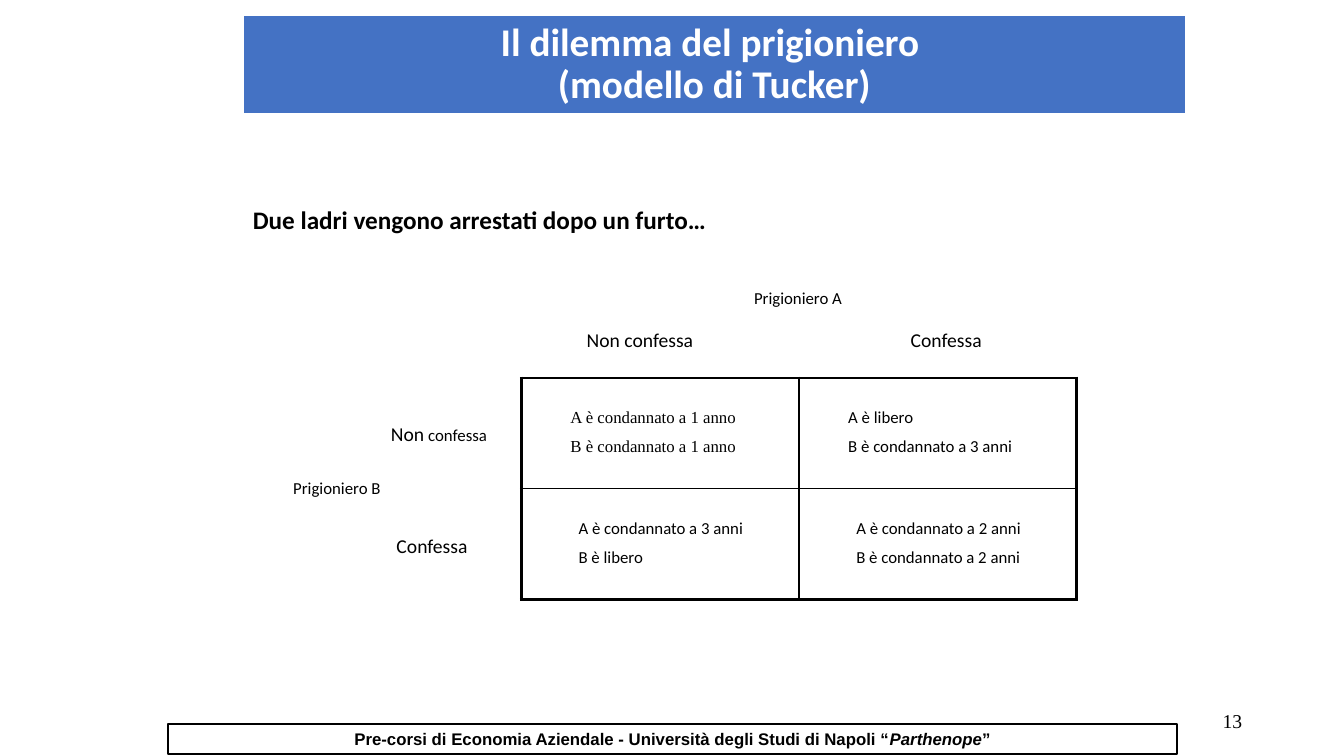
"""Build the prisoner's dilemma slide with its payoff matrix."""
from lxml.etree import SubElement
from pptx import Presentation
from pptx.dml.color import RGBColor
from pptx.enum.shapes import MSO_SHAPE
from pptx.enum.text import MSO_ANCHOR, PP_ALIGN
from pptx.oxml.ns import qn
from pptx.util import Inches, Pt

BLACK = RGBColor(0, 0, 0)
WHITE = RGBColor(0xFF, 0xFF, 0xFF)
BLUE = RGBColor(0x44, 0x72, 0xC4)

TITLE = "Il dilemma del prigioniero \v(modello di Tucker)"
INTRO = "Due ladri vengono arrestati dopo un furto…"
SLIDE_NUMBER = "13"
FOOTER = [
    ("Pre-corsi di Economia Aziendale - Università degli Studi di Napoli “", {}),
    ("Parthenope", {"italic": True}),
    ("”", {}),
]
LEFT, CENTER, RIGHT = PP_ALIGN.LEFT, PP_ALIGN.CENTER, PP_ALIGN.RIGHT
LABELS = [
    ([("Prigioniero A", {"size": Pt(12)})], (7.38, 2.81, 1.42, 0.3), LEFT),
    ([("Prigioniero B", {"size": Pt(12)})], (2.81, 4.69, 1.42, 0.3), LEFT),
    ([("Non confessa", {})], (5.72, 3.2, 1.49, 0.34), LEFT),
    ([("Confessa", {})], (8.64, 3.2, 1.49, 0.34), CENTER),
    ([("Non", {}), (" confessa", {"size": Pt(12)})], (3.78, 4.14, 1.47, 0.34), LEFT),
    ([("Confessa", {})], (3.54, 5.25, 1.49, 0.34), CENTER),
]
OUTCOMES = [
    [("A è condannato a 1 anno", "B è condannato a 1 anno"),
     ("A è libero", "B è condannato a 3 anni")],
    [("A è condannato a 3 anni", "B è libero"),
     ("A è condannato a 2 anni", "B è condannato a 2 anni")],
]
MATRIX_LEFT, MATRIX_TOP = 5.17, 3.75
COLUMN_WIDTH, ROW_HEIGHT = 2.755, 1.1
ROW_INDENTS = (0.39, 0.47)


def apply_format(font, **values):
    for name, value in values.items():
        if name == "color":
            font.color.rgb = value
        else:
            setattr(font, name, value)


def fill_text(shape, paragraphs, align=LEFT, **values):
    frame = shape.text_frame
    frame.word_wrap = True
    for index, runs in enumerate(paragraphs):
        paragraph = frame.add_paragraph() if index else frame.paragraphs[0]
        paragraph.alignment = align
        if index:
            paragraph.space_before = Pt(6)
        for text, changes in runs:
            run = paragraph.add_run()
            run.text = text
            apply_format(run.font, **{"name": "Calibri", "color": BLACK, **values, **changes})
    return frame


def add_text(slide, paragraphs, place, align=LEFT, **values):
    box = slide.shapes.add_textbox(*map(Inches, place))
    fill_text(box, paragraphs, align, **values)
    return box


def add_border(cell, side, width):
    line = SubElement(cell._tc.get_or_add_tcPr(), qn(f"a:ln{side}"), w=str(Pt(width)))
    fill = SubElement(line, qn("a:solidFill"))
    SubElement(fill, qn("a:srgbClr"), val=str(BLACK))


def add_title(slide):
    title = slide.shapes.title
    title.left, title.top, title.width, title.height = map(Inches, (2.41, 0.15, 9.35, 0.98))
    title.fill.solid()
    title.fill.fore_color.rgb = BLUE
    title.line.color.rgb = WHITE
    title.line.width = Pt(1.5)
    frame = title.text_frame
    frame.text = TITLE
    frame.vertical_anchor = MSO_ANCHOR.MIDDLE
    heading = frame.paragraphs[0]
    heading.alignment = CENTER
    heading.line_spacing = 0.9
    for run in heading.runs:
        apply_format(run.font, name="Calibri", size=Pt(28), bold=True, color=WHITE)


def add_matrix(slide):
    matrix = slide.shapes.add_table(
        2, 2, Inches(MATRIX_LEFT), Inches(MATRIX_TOP),
        Inches(2 * COLUMN_WIDTH), Inches(2 * ROW_HEIGHT)).table
    for row, outcomes in enumerate(OUTCOMES):
        for column, sentences in enumerate(outcomes):
            cell = matrix.cell(row, column)
            outer = {"L": column == 0, "R": column == 1, "T": row == 0, "B": row == 1}
            for side, is_outer in outer.items():
                add_border(cell, side, 2.25 if is_outer else 1)
            cell.fill.background()
            place = (MATRIX_LEFT + column * COLUMN_WIDTH + ROW_INDENTS[row],
                     MATRIX_TOP + row * ROW_HEIGHT + 0.24, 2.13, 0.6)
            font = "Times New Roman" if row == column == 0 else "Calibri"
            add_text(slide, [[(sentence, {})] for sentence in sentences], place,
                     name=font, size=Pt(12))


def add_footer(slide):
    footer = slide.shapes.add_shape(
        MSO_SHAPE.RECTANGLE, *map(Inches, (1.67, 7.18, 10, 0.3)))
    footer.shadow.inherit = False
    footer.fill.background()
    footer.line.color.rgb = BLACK
    footer.line.width = Pt(1.5)
    frame = fill_text(footer, [FOOTER], CENTER, name="Arial", size=Pt(12), bold=True)
    frame.vertical_anchor = MSO_ANCHOR.TOP


def main():
    deck = Presentation()
    deck.slide_width, deck.slide_height = Inches(13.33), Inches(7.5)
    slide = deck.slides.add_slide(deck.slide_layouts[5])
    add_title(slide)
    number = add_text(slide, [[(SLIDE_NUMBER, {})]], (9.42, 6.95, 3, 0.4), RIGHT,
                      name="Times New Roman", size=Pt(14))
    number.text_frame.vertical_anchor = MSO_ANCHOR.MIDDLE
    intro = add_text(slide, [[(INTRO, {})]], (2.41, 2.01, 8.5, 4.5), size=Pt(18), bold=True)
    intro.text_frame.paragraphs[0].line_spacing = 0.9
    add_matrix(slide)
    for runs, place, align in LABELS:
        add_text(slide, [runs], place, align, size=Pt(14))
    add_footer(slide)
    deck.save("out.pptx")


if __name__ == "__main__":
    main()
